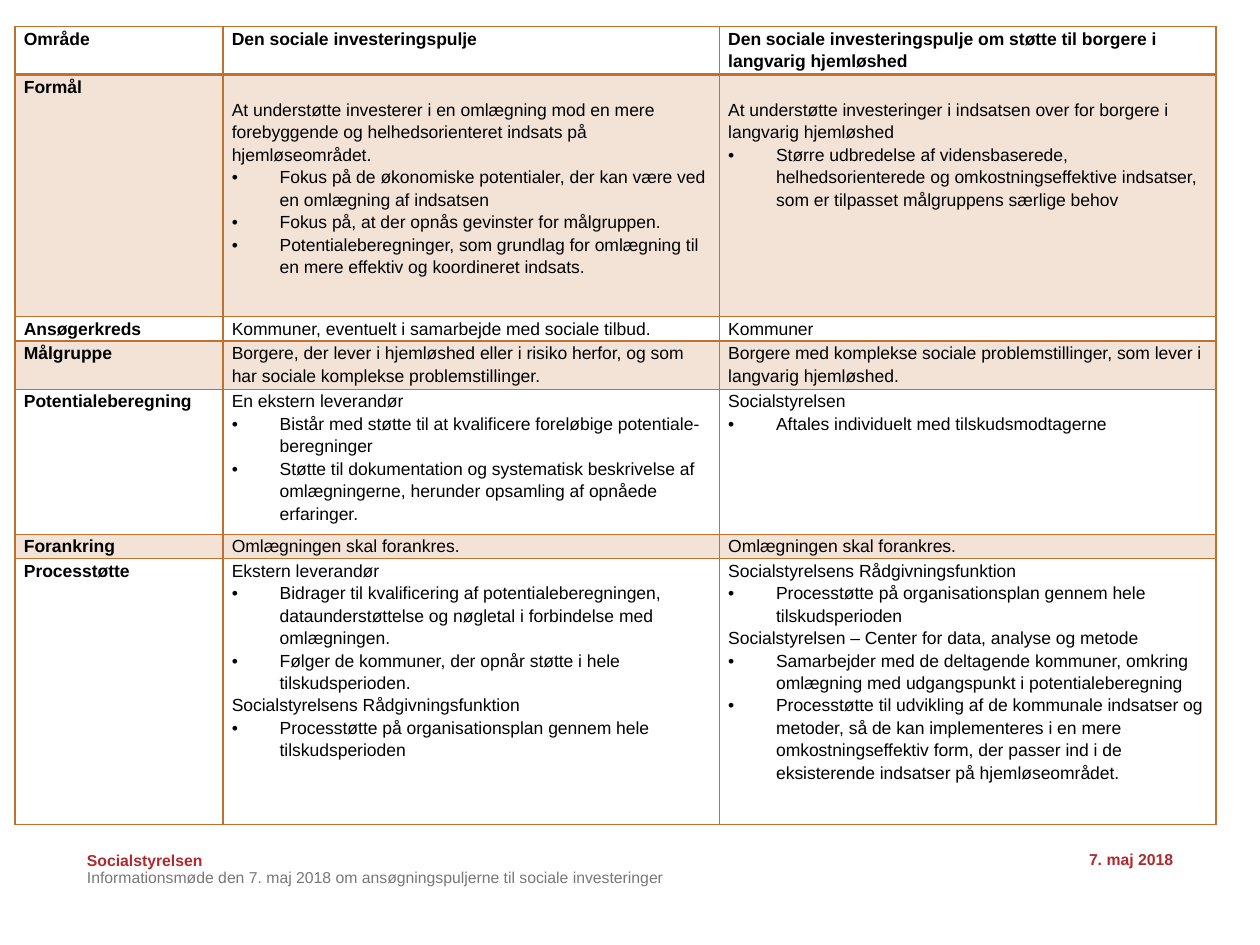
from lxml import etree
from pptx import Presentation
from pptx.dml.color import RGBColor
from pptx.enum import text as t
from pptx.oxml.ns import qn
from pptx.util import Inches, Pt

BLACK, RED, GREY = "000000", "AF292E", "797777"
LINE, TINT = "C27030", "F3E2D6"
COLS = [1.65, 3.94, 3.94]
PAD, LEAD, INDENT = 0.07, 0.18, 0.38

# Each row: height, blank line above the body text, one list of paragraphs per column.
# A paragraph that starts with "•" is a bullet.
ROWS = [
    (0.38, False, ["Område"], ["Den sociale investeringspulje"],
     ["Den sociale investeringspulje om støtte til borgere i langvarig hjemløshed"]),
    (1.92, True, ["Formål"],
     ["At understøtte investerer i en omlægning mod en mere forebyggende og "
      "helhedsorienteret indsats på hjemløseområdet.",
      "•Fokus på de økonomiske potentialer, der kan være ved en omlægning af indsatsen",
      "•Fokus på, at der opnås gevinster for målgruppen.",
      "•Potentialeberegninger, som grundlag for omlægning til en mere effektiv og "
      "koordineret indsats."],
     ["At understøtte investeringer i indsatsen over for borgere i langvarig hjemløshed",
      "•Større udbredelse af vidensbaserede, helhedsorienterede og omkostningseffektive "
      "indsatser, som er tilpasset målgruppens særlige behov"]),
    (0.19, False, ["Ansøgerkreds"],
     ["Kommuner, eventuelt i samarbejde med sociale tilbud."], ["Kommuner"]),
    (0.38, False, ["Målgruppe"],
     ["Borgere, der lever i hjemløshed eller i risiko herfor, og som har sociale "
      "komplekse problemstillinger."],
     ["Borgere med komplekse sociale problemstillinger, som lever i langvarig hjemløshed."]),
    (1.15, False, ["Potentialeberegning"],
     ["En ekstern leverandør",
      "•Bistår med støtte til at kvalificere foreløbige potentiale-beregninger",
      "•Støtte til dokumentation og systematisk beskrivelse af omlægningerne, herunder "
      "opsamling af opnåede erfaringer."],
     ["Socialstyrelsen", "•Aftales individuelt med tilskudsmodtagerne"]),
    (0.19, False, ["Forankring"],
     ["Omlægningen skal forankres."], ["Omlægningen skal forankres."]),
    (2.11, False, ["Processtøtte"],
     ["Ekstern leverandør",
      "•Bidrager til kvalificering af potentialeberegningen, dataunderstøttelse og "
      "nøgletal i forbindelse med omlægningen.",
      "•Følger de kommuner, der opnår støtte i hele tilskudsperioden.",
      "Socialstyrelsens Rådgivningsfunktion",
      "•Processtøtte på organisationsplan gennem hele tilskudsperioden"],
     ["Socialstyrelsens Rådgivningsfunktion",
      "•Processtøtte på organisationsplan gennem hele tilskudsperioden",
      "Socialstyrelsen – Center for data, analyse og metode",
      "•Samarbejder med de deltagende kommuner, omkring omlægning med udgangspunkt i "
      "potentialeberegning",
      "•Processtøtte til udvikling af de kommunale indsatser og metoder, så de kan "
      "implementeres i en mere omkostningseffektiv form, der passer ind i de "
      "eksisterende indsatser på hjemløseområdet."]),
]

FOOT = [
    ("Socialstyrelsen", (0.69, 6.75, 1.18, 0.15), dict(color=RED, bold=True)),
    ("7. maj 2018", (7.06, 6.62, 2.25, 0.4),
     dict(color=RED, bold=True, align=t.PP_ALIGN.RIGHT)),
    ("Informationsmøde den 7. maj 2018 om ansøgningspuljerne til sociale investeringer",
     (0.69, 6.86, 5.21, 0.2), dict(color=GREY)),
]


def rgb(code):
    return RGBColor.from_string(code)


def write(par, words, size=9, color=BLACK, bold=False, align=None, lead=None):
    par.alignment, par.line_spacing = align, lead
    if words.startswith("•"):
        words = words[1:]
        props = par._p.get_or_add_pPr()
        props.set("marL", str(Inches(INDENT)))
        props.set("indent", str(-Inches(INDENT)))
        etree.SubElement(props, qn("a:buFont"), typeface="Arial")
        etree.SubElement(props, qn("a:buChar"), char="•")
    run = par.add_run()
    run.text = words
    font = run.font
    font.name, font.size, font.bold = "Arial", Pt(size), bold
    font.color.rgb = rgb(color)


def edge(cell, **widths):
    """Draw the cell borders, given in schema order, ahead of the fill."""
    props = cell._tc.get_or_add_tcPr()
    for spot, (side, width) in enumerate(widths.items()):
        line = etree.Element(qn(f"a:ln{side}"), w=str(Pt(width)))
        fill = etree.SubElement(line, qn("a:solidFill"))
        etree.SubElement(fill, qn("a:srgbClr"), val=LINE)
        props.insert(spot, line)


def fill_cell(cell, pars, row, col, gap):
    cell.margin_left = cell.margin_right = Inches(PAD)
    cell.margin_top = Inches(LEAD if gap and col else 0)
    cell.margin_bottom = 0
    if row % 2:
        cell.fill.solid()
        cell.fill.fore_color.rgb = rgb(TINT)
    else:
        cell.fill.background()
    edge(cell, L=1, R=1, T=2 if row == 1 else 1, B=2 if row == 0 else 1)
    frame = cell.text_frame
    for i, words in enumerate(pars):
        par = frame.add_paragraph() if i else frame.paragraphs[0]
        write(par, words, size=10, bold=row == 0 or col == 0, lead=1.15)


def add_grid(slide):
    high = sum(row[0] for row in ROWS)
    grid = slide.shapes.add_table(len(ROWS), len(COLS), Inches(0.12), Inches(0.21),
                                  Inches(sum(COLS)), Inches(high)).table
    grid.first_row = grid.horz_banding = False
    for col, width in enumerate(COLS):
        grid.columns[col].width = Inches(width)
    for row, (height, gap, *cells) in enumerate(ROWS):
        grid.rows[row].height = Inches(height)
        for col, pars in enumerate(cells):
            fill_cell(grid.cell(row, col), pars, row, col, gap)


def add_foot(slide):
    for words, place, style in FOOT:
        frame = slide.shapes.add_textbox(*map(Inches, place)).text_frame
        frame.word_wrap = True
        frame.vertical_anchor = t.MSO_ANCHOR.MIDDLE
        frame.margin_left = frame.margin_right = 0
        frame.margin_top = frame.margin_bottom = 0
        write(frame.paragraphs[0], words, **style)


def main():
    deck = Presentation()
    deck.slide_width, deck.slide_height = Inches(10), Inches(7.5)
    slide = deck.slides.add_slide(deck.slide_layouts[6])
    add_foot(slide)
    add_grid(slide)
    deck.save("out.pptx")


if __name__ == "__main__":
    main()
